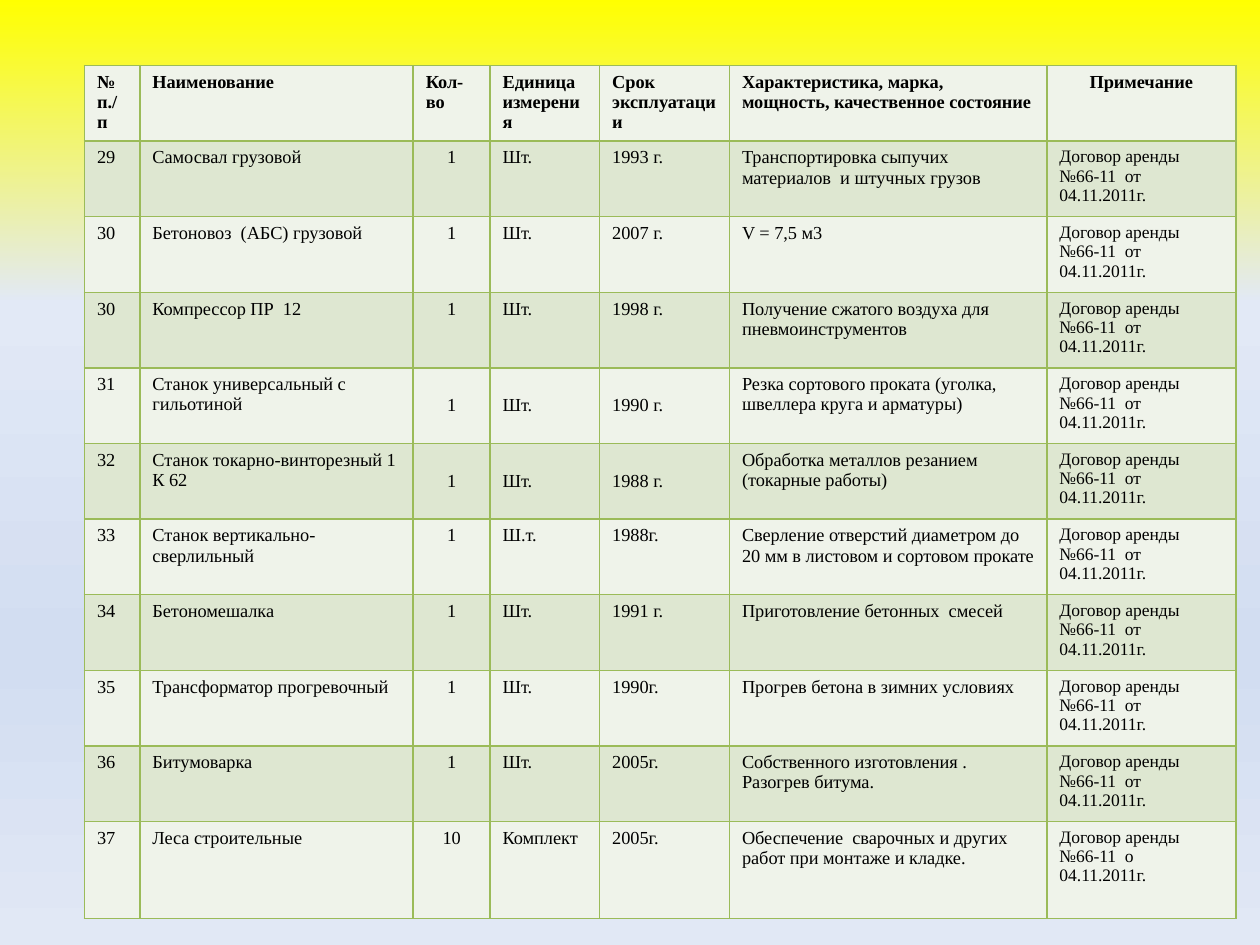
from lxml import etree
from pptx import Presentation
from pptx import util as u
from pptx.dml.color import RGBColor
from pptx.enum import text
from pptx.oxml.ns import qn

COLORS = {
    "ink": "000000", "border": "9BBB59", "light": "EFF3EA", "band": "DEE7D1",
    "sky_top": "FFFF00", "sky_haze": "E2E9F6", "sky_mid": "D2DDF1", "sky_low": "E1E8F5",
}
FONT = "Times New Roman"
TABLE_BOX = (0.67, 0.52, 9.14, 6.77)
COLUMN_WIDTHS = (0.44, 2.17, 0.61, 0.87, 1.03, 2.52, 1.5)
ROW_HEIGHT = 0.6
COUNT, UNIT, YEAR, NOTE = 2, 3, 4, 6
LOWERED_ROWS = ("31", "32")
LINE = 0.17
LEASE = "Договор аренды №66-11  от 04.11.2011г."

HEADER = ("№ п./п", "Наименование", "Кол-во", "Единица\nизмерения", "Срок\nэксплуатации",
          "Характеристика, марка, мощность, качественное состояние", "Примечание")
EQUIPMENT = (
    ("29", "Самосвал грузовой", "1", "Шт.", "1993 г.",
     "Транспортировка сыпучих материалов  и штучных грузов", LEASE),
    ("30", "Бетоновоз  (АБС) грузовой", "1", "Шт.", "2007 г.", "V = 7,5 м3", LEASE),
    ("30", "Компрессор ПР  12", "1", "Шт.", "1998 г.",
     "Получение сжатого воздуха для пневмоинструментов", LEASE),
    ("31", "Станок универсальный с гильотиной", "1", "Шт.", "1990 г.",
     "Резка сортового проката (уголка, швеллера круга и арматуры)", LEASE),
    ("32", "Станок токарно-винторезный 1 К 62", "1", "Шт.", "1988 г.",
     "Обработка металлов резанием (токарные работы)", LEASE),
    ("33", "Станок вертикально-сверлильный", "1", "Ш.т.", "1988г.",
     "Сверление отверстий диаметром до 20 мм в листовом и сортовом прокате", LEASE),
    ("34", "Бетономешалка", "1", "Шт.", "1991 г.", "Приготовление бетонных  смесей", LEASE),
    ("35", "Трансформатор прогревочный", "1", "Шт.", "1990г.",
     "Прогрев бетона в зимних условиях", LEASE),
    ("36", "Битумоварка", "1", "Шт.", "2005г.",
     "Собственного изготовления . Разогрев битума.", LEASE),
    ("37", "Леса строительные", "10", "Комплект", "2005г.",
     "Обеспечение  сварочных и других работ при монтаже и кладке.",
     "Договор аренды №66-11  о 04.11.2011г."),
)


def write_text(frame, words, size=10.5, bold=False, centered=False):
    frame.text = words
    for para in frame.paragraphs:
        para.alignment = text.PP_ALIGN.CENTER if centered else text.PP_ALIGN.LEFT
        for span in para.runs:
            span.font.name = FONT
            span.font.size = u.Pt(size)
            span.font.bold = bold
            span.font.color.rgb = RGBColor.from_string(COLORS["ink"])


def add_color(parent, name):
    fill = etree.SubElement(parent, qn("a:solidFill"))
    etree.SubElement(fill, qn("a:srgbClr"), val=COLORS[name])


def style_cell(cell, fill):
    cell.fill.solid()
    cell.fill.fore_color.rgb = RGBColor.from_string(COLORS[fill])
    properties = cell._tc.get_or_add_tcPr()
    for position, side in enumerate(("a:lnL", "a:lnR", "a:lnT", "a:lnB")):
        line = etree.Element(qn(side), w=str(u.Pt(1)))
        add_color(line, "border")
        properties.insert(position, line)  # borders must precede the fill


def paint_background(page):
    """Fill the page with a vertical gradient of four stops."""
    fill = page.background.fill
    fill.gradient()
    fill.gradient_angle = 270
    stops = page.element.find(".//" + qn("a:gsLst"))
    for stop in list(stops):
        stops.remove(stop)
    for percent, name in ((0, "sky_top"), (32, "sky_haze"), (69, "sky_mid"), (100, "sky_low")):
        stop = etree.SubElement(stops, qn("a:gs"), pos=str(percent * 1000))
        etree.SubElement(stop, qn("a:srgbClr"), val=COLORS[name])


def add_equipment_table(page, box):
    left, top, width, height = box
    records = (HEADER,) + EQUIPMENT
    table = page.shapes.add_table(len(records), len(HEADER), *map(u.Inches, box)).table
    for column, share in zip(table.columns, COLUMN_WIDTHS):
        column.width = u.Inches(width * share / sum(COLUMN_WIDTHS))
    for row in table.rows:
        row.height = u.Inches(ROW_HEIGHT)
    table.rows[len(records) - 1].height = u.Inches(height - ROW_HEIGHT * len(EQUIPMENT))

    for r, record in enumerate(records):
        is_header = r == 0
        for c, words in enumerate(record):
            cell = table.cell(r, c)
            style_cell(cell, "band" if r % 2 else "light")
            write_text(cell.text_frame, words, bold=is_header,
                       size=10 if c == NOTE and not is_header else 10.5,
                       centered=c == (NOTE if is_header else COUNT))
            if record[0] in LOWERED_ROWS and c in (COUNT, UNIT, YEAR):
                cell.margin_top = u.Inches(0.05 + LINE)


def main():
    deck = Presentation()
    deck.slide_width, deck.slide_height = u.Inches(10), u.Inches(7.5)
    page = deck.slides.add_slide(deck.slide_layouts[6])
    paint_background(page)
    add_equipment_table(page, TABLE_BOX)
    deck.save("out.pptx")


if __name__ == "__main__":
    main()
